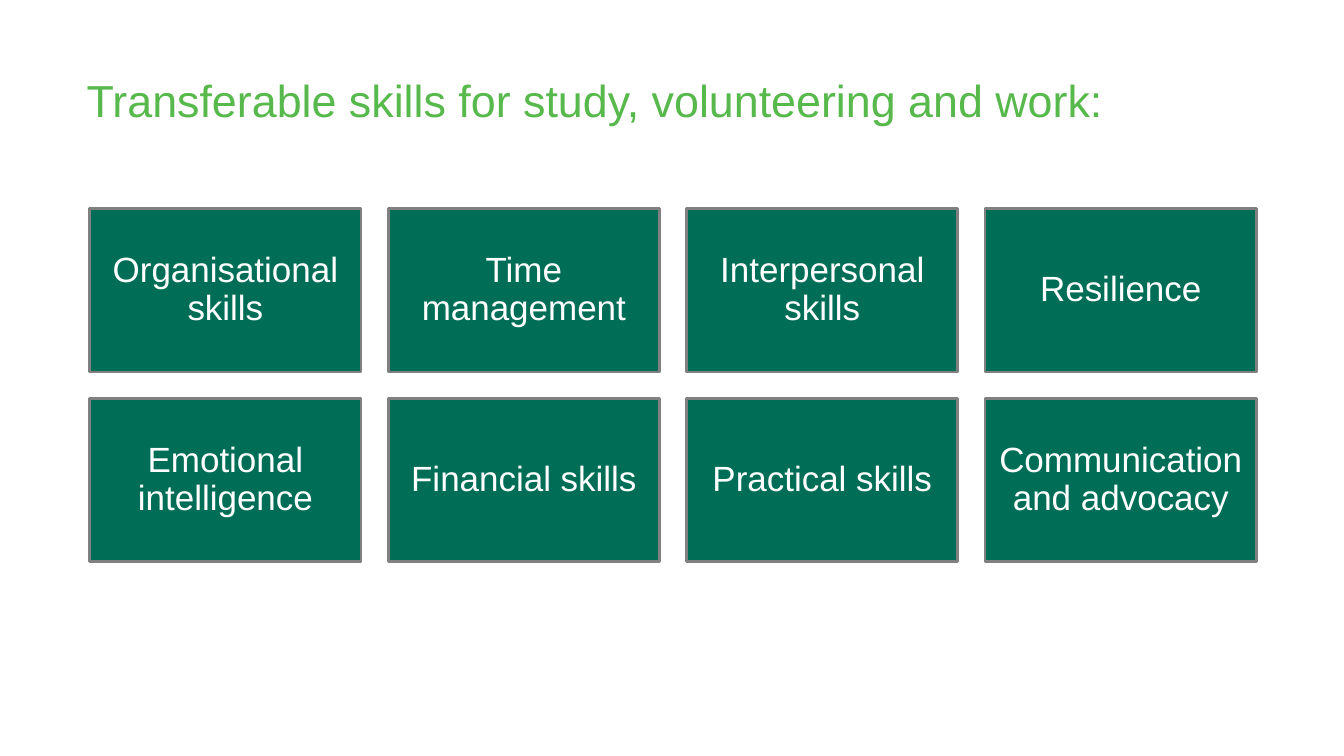
from dataclasses import dataclass
from pptx import Presentation
from pptx.dml.color import RGBColor
from pptx.enum import shapes, text
from pptx.util import Inches, Pt


@dataclass
class Theme:
    face: str = "Arial"
    head: RGBColor = RGBColor(0x57, 0xB9, 0x4B)
    fill: RGBColor = RGBColor(0x00, 0x6E, 0x56)
    edge: RGBColor = RGBColor(0x80, 0x80, 0x80)
    ink: RGBColor = RGBColor(0xFF, 0xFF, 0xFF)
    title: int = 32
    label: int = 25
    line: int = 2


def apply(item, form):
    for key, value in form.items():
        setattr(item, key, value)


class Deck:
    def __init__(self, theme):
        self.theme = theme
        self.show = Presentation()
        apply(self.show, {"slide_width": Inches(13.33), "slide_height": Inches(7.5)})
        self.slide = self.show.slides.add_slide(self.show.slide_layouts[5])

    def label(self, shape, words, size, color, align, pads, gap=1.0):
        frame = shape.text_frame
        sides = ("margin_left", "margin_top", "margin_right", "margin_bottom")
        apply(frame, {"text": words, "word_wrap": True,
                      "auto_size": text.MSO_AUTO_SIZE.NONE,
                      "vertical_anchor": text.MSO_ANCHOR.MIDDLE})
        apply(frame, {side: Inches(pad) for side, pad in zip(sides, pads)})
        para = frame.paragraphs[0]
        apply(para, {"alignment": align, "line_spacing": gap})
        font = para.runs[0].font
        apply(font, {"name": self.theme.face, "size": Pt(size)})
        font.color.rgb = color

    def title(self, words, left, top, width, height):
        shape = self.slide.shapes.title
        apply(shape, {"left": Inches(left), "top": Inches(top),
                      "width": Inches(width), "height": Inches(height)})
        self.label(shape, words, self.theme.title, self.theme.head,
                   text.PP_ALIGN.LEFT, (0.1, 0.05, 0.1, 0.53))

    def card(self, words, left, top, width, height):
        shape = self.slide.shapes.add_shape(
            shapes.MSO_SHAPE.RECTANGLE,
            Inches(left), Inches(top), Inches(width), Inches(height))
        shape.shadow.inherit = False
        shape.fill.solid()
        shape.fill.fore_color.rgb = self.theme.fill
        shape.line.color.rgb = self.theme.edge
        shape.line.width = Pt(self.theme.line)
        self.label(shape, words, self.theme.label, self.theme.ink,
                   text.PP_ALIGN.CENTER, (0.1,) * 4, 0.9)

    def grid(self, names, cols, left, top, width, height, gap_x, gap_y):
        for index, name in enumerate(names):
            row, col = divmod(index, cols)
            self.card(name, left + col * (width + gap_x),
                      top + row * (height + gap_y), width, height)


def main():
    deck = Deck(Theme())
    deck.title("Transferable skills for study, volunteering and work:",
               0.76, 0.6, 11.79, 1.25)
    skills = ["Organisational skills", "Time management",
              "Interpersonal skills", "Resilience",
              "Emotional intelligence", "Financial skills",
              "Practical skills", "Communication and advocacy"]
    deck.grid(skills, 4, 0.89, 2.07, 2.69, 1.62, 0.27, 0.26)
    deck.show.save("out.pptx")


if __name__ == "__main__":
    main()
